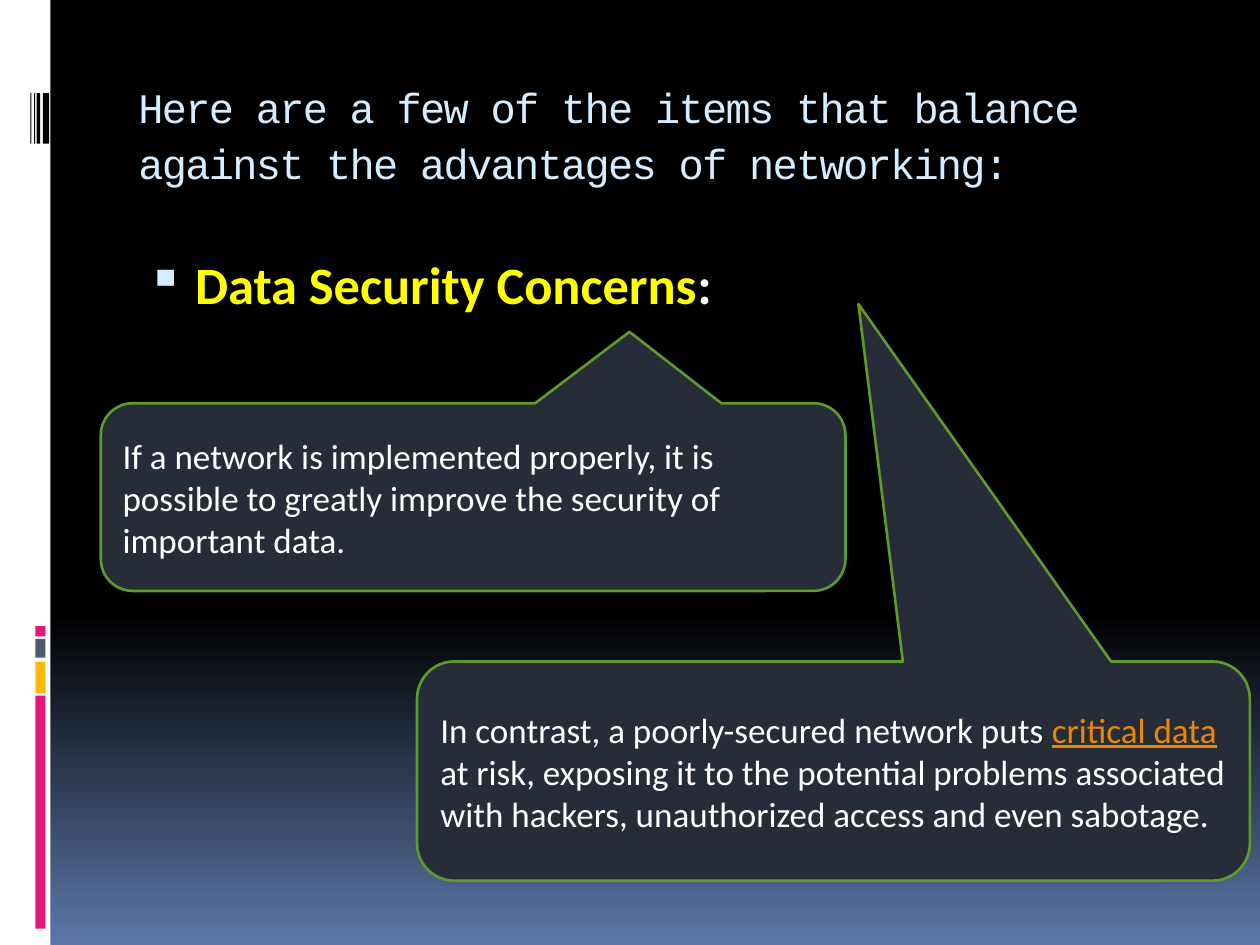
from dataclasses import dataclass

from lxml.etree import SubElement
from pptx import Presentation
from pptx.dml.color import RGBColor as Rgb
from pptx.enum.shapes import MSO_SHAPE as Shape
from pptx.enum.text import MSO_ANCHOR as Anchor, PP_ALIGN as Align
from pptx.oxml.ns import qn
from pptx.util import Inches, Pt


@dataclass(frozen=True)
class Theme:
    """Colours, fonts and type sizes of the slide."""
    black: str = "000000"
    white: str = "FFFFFF"
    blue: str = "5B77A8"
    pale: str = "D6ECFF"
    pink: str = "EA157A"
    gold: str = "FEB80A"
    slate: str = "4E5B6F"
    yellow: str = "FFFF00"
    orange: str = "EB8803"
    panel: str = "272D38"
    green: str = "5E9B2C"
    mono: str = "Courier New"
    sans: str = "Calibri"
    title: int = 24
    point: int = 30
    note: int = 20


LOOK = Theme()


def place(box):
    """Turn left, top, width and height into lengths."""
    return [Inches(n) for n in box]


def paint(slide):
    """Fill the background with a fade from black to blue."""
    fill = slide.background.fill
    fill.gradient()
    fill.gradient_angle = 270
    for stop, (spot, tint) in zip(fill.gradient_stops, ((0.65, LOOK.black), (1, LOOK.blue))):
        stop.position = spot
        stop.color.rgb = Rgb.from_string(tint)


def add_form(slide, kind, box, tint):
    """Add a flat filled shape without a line."""
    form = slide.shapes.add_shape(kind, *place(box))
    form.shadow.inherit = False
    form.fill.solid()
    form.fill.fore_color.rgb = Rgb.from_string(tint)
    form.line.fill.background()
    return form


def style(run, face, size, tint, bold=False, under=False):
    """Set the font of one run."""
    font = run.font
    font.name, font.size = face, Pt(size)
    font.bold, font.underline = bold, under
    font.color.rgb = Rgb.from_string(tint)


def write(para, parts, face, size, bold=False):
    """Write runs of text, each with its colour and underline."""
    for text, tint, under in parts:
        run = para.add_run()
        run.text = text
        style(run, face, size, tint, bold, under)


def add_box(slide, box):
    """Add a wrapping text box and return its first paragraph."""
    frame = slide.shapes.add_textbox(*place(box)).text_frame
    frame.word_wrap = True
    return frame.paragraphs[0]


def add_title(slide, text):
    """Add the heading in tightened type."""
    para = add_box(slide, (1, 0.56, 8.5, 1))
    para.text = text
    para.line_spacing = 1.1
    run = para.runs[0]
    style(run, LOOK.mono, LOOK.title, LOOK.pale)
    run.font._element.set("spc", "-100")


def add_point(slide, parts):
    """Add the bulleted main point."""
    para = add_box(slide, (1, 1.95, 8.5, 0.7))
    para.space_before = Pt(7)
    write(para, parts, LOOK.sans, LOOK.point, True)
    props = para._p.get_or_add_pPr()
    props.set("marL", str(Inches(0.45)))
    props.set("indent", str(Inches(-0.38)))
    tint = SubElement(props, qn("a:buClr"))
    SubElement(tint, qn("a:srgbClr"), val=LOOK.pale)
    SubElement(props, qn("a:buSzPct"), val="95000")
    SubElement(props, qn("a:buChar"), char="▪")


def add_note(slide, box, tip, parts):
    """Add a rounded callout whose tip is given relative to its centre."""
    form = add_form(slide, Shape.ROUNDED_RECTANGULAR_CALLOUT, box, LOOK.panel)
    for spot, value in enumerate((*tip, 0.17)):
        form.adjustments[spot] = value
    form.line.color.rgb = Rgb.from_string(LOOK.green)
    form.line.width = Pt(1.5)
    frame = form.text_frame
    frame.word_wrap = True
    frame.vertical_anchor = Anchor.MIDDLE
    para = frame.paragraphs[0]
    para.alignment = Align.LEFT
    write(para, parts, LOOK.sans, LOOK.note)


def add_side(slide):
    """Add the white side band with its blocks and bars."""
    add_form(slide, Shape.RECTANGLE, (0, 0, 0.4, 7.5), LOOK.white)
    blocks = ((5.52, 1.85, LOOK.pink), (5.25, 0.25, LOOK.gold),
              (5.07, 0.15, LOOK.slate), (4.97, 0.08, LOOK.pink))
    for top, high, tint in blocks:
        add_form(slide, Shape.RECTANGLE, (0.28, top, 0.08, high), tint)
    for left, wide in ((0.34, 0.05), (0.29, 0.03), (0.27, 0.01), (0.24, 0.01)):
        add_form(slide, Shape.RECTANGLE, (left, 0.74, wide, 0.4), LOOK.black)


def main():
    """Build and save the slide."""
    deck = Presentation()
    deck.slide_width, deck.slide_height = Inches(10), Inches(7.5)
    slide = deck.slides.add_slide(deck.slide_layouts[6])
    paint(slide)
    add_side(slide)
    add_title(slide, "Here are a few of the items that balance against the advantages of networking:")
    add_point(slide, [("Data Security Concerns", LOOK.yellow, False), (":", LOOK.white, False)])
    add_note(slide, (0.8, 3.2, 5.91, 1.49), (0.21, -0.88), [
        ("If a network is implemented properly, it is possible to greatly "
         "improve the security of important data.", LOOK.white, False)])
    add_note(slide, (3.31, 5.25, 6.61, 1.74), (0.03, -2.13), [
        ("In contrast, a poorly-secured network puts ", LOOK.white, False),
        ("critical data", LOOK.orange, True),
        (" at risk, exposing it to the potential problems associated with "
         "hackers, unauthorized access and even sabotage.", LOOK.white, False)])
    deck.save("out.pptx")


if __name__ == "__main__":
    main()
